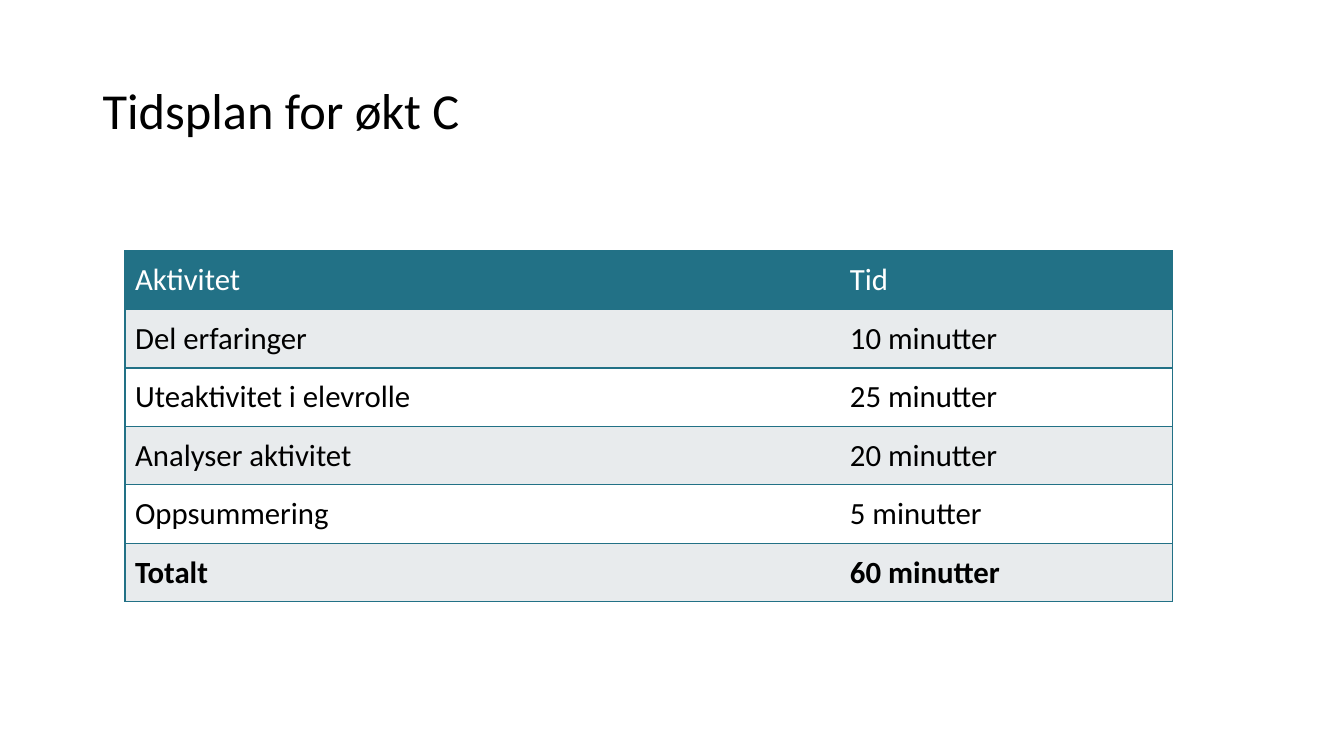
import pptx
import pptx.dml.color
import pptx.enum.text
import pptx.oxml.ns
import pptx.util
from lxml import etree

Inches, Pt = pptx.util.Inches, pptx.util.Pt
MIDDLE = pptx.enum.text.MSO_ANCHOR.MIDDLE

SCHEDULE = [
    ("Aktivitet", "Tid"),
    ("Del erfaringer", "10 minutter"),
    ("Uteaktivitet i elevrolle", "25 minutter"),
    ("Analyser aktivitet", "20 minutter"),
    ("Oppsummering", "5 minutter"),
    ("Totalt", "60 minutter"),
]


def rgb(value):
    return pptx.dml.color.RGBColor.from_string(value)


def set_border(cell, side, color=None):
    """Draw a 1 pt line on side L, R, T or B, or none without a color."""
    qn = pptx.oxml.ns.qn
    ln = etree.SubElement(cell._tc.get_or_add_tcPr(), qn(f"a:ln{side}"), w=str(Pt(1)))
    if color:
        fill = etree.SubElement(ln, qn("a:solidFill"))
        etree.SubElement(fill, qn("a:srgbClr"), val=color)
    else:
        etree.SubElement(ln, qn("a:noFill"))


class SlideBuilder:
    font = "Calibri"
    ink = "000000"
    white = "FFFFFF"
    teal = "227186"
    band = "E8EBED"

    def __init__(self, slide):
        self.slide = slide

    def set_text(self, tf, text, size, color, bold=False):
        p = tf.paragraphs[0]
        p.text = text
        p.font.name = self.font
        p.font.size = Pt(size)
        p.font.bold = bold
        p.font.color.rgb = rgb(color)
        return p

    def title(self, text, left, top, width, height):
        sp = self.slide.shapes.add_textbox(
            Inches(left), Inches(top), Inches(width), Inches(height))
        tf = sp.text_frame
        tf.word_wrap = True
        tf.vertical_anchor = MIDDLE
        self.set_text(tf, text, 36, self.ink).line_spacing = 0.9

    def table(self, rows, left, top, widths, row_height):
        """Add a banded table with a header row and a bold total row."""
        table = self.slide.shapes.add_table(
            len(rows), len(widths), Inches(left), Inches(top),
            Inches(sum(widths)), Inches(row_height * len(rows))).table
        for column, width in zip(table.columns, widths):
            column.width = Inches(width)
        table.first_row = table.horz_banding = False
        for i, row in enumerate(rows):
            header, total = i == 0, i == len(rows) - 1
            fill = self.teal if header else self.band if i % 2 else self.white
            for j, text in enumerate(row):
                cell = table.cell(i, j)
                cell.vertical_anchor = MIDDLE
                set_border(cell, "L", self.teal if j == 0 else None)
                set_border(cell, "R", self.teal if j == len(row) - 1 else None)
                set_border(cell, "T", self.teal)
                set_border(cell, "B", self.teal)
                cell.fill.solid()
                cell.fill.fore_color.rgb = rgb(fill)
                self.set_text(cell.text_frame, text, 22,
                              self.white if header else self.ink, total)


def main():
    prs = pptx.Presentation()
    prs.slide_width, prs.slide_height = Inches(13.33), Inches(7.5)
    s = SlideBuilder(prs.slides.add_slide(prs.slide_layouts[6]))
    s.title("Tidsplan for økt C", 0.92, 0.4, 11.5, 1.45)
    s.table(SCHEDULE, 1.24, 2.49, (7.09, 3.3), 0.58)
    prs.save("out.pptx")


if __name__ == "__main__":
    main()
